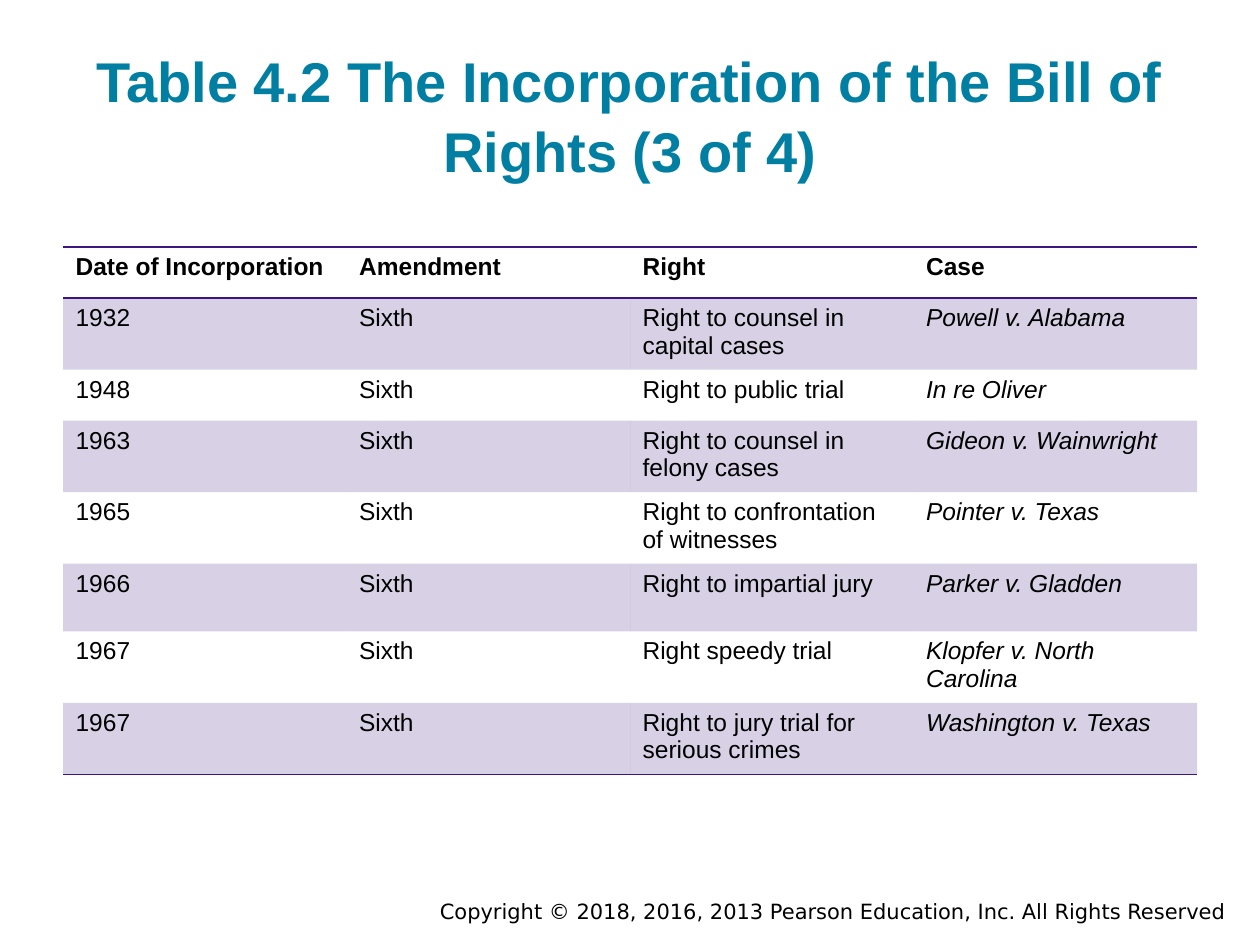
from pptx import Presentation
from pptx.dml.color import RGBColor
from pptx.enum.text import MSO_ANCHOR, PP_ALIGN
from pptx.oxml import parse_xml
from pptx.oxml.ns import nsdecls, qn
from pptx.util import Pt

TEAL = RGBColor(0x00, 0x7F, 0xA3)
PURPLE = RGBColor(0x3C, 0x15, 0x81)
BLACK = RGBColor(0x00, 0x00, 0x00)
NO_STYLE = "{2D5ABB26-0587-4C30-8999-92F81FD0307C}"


def write_text(paragraph, text, color, **font_values):
    paragraph.text = text
    font = paragraph.runs[0].font
    font.color.rgb = color
    for name, value in font_values.items():
        setattr(font, name, value)


def add_border(cell, side):
    line = parse_xml(
        f'<a:{side} {nsdecls("a")} w="{Pt(1)}"><a:solidFill>'
        f'<a:srgbClr val="{PURPLE}"/></a:solidFill></a:{side}>'
    )
    properties = cell._tc.get_or_add_tcPr()
    position = len(properties.findall(qn("a:lnT")))
    properties.insert(position, line)


presentation = Presentation()
presentation.slide_width, presentation.slide_height = Pt(720), Pt(540)
slide = presentation.slides.add_slide(presentation.slide_layouts[6])

text_boxes = [
    {
        "box": (144, 509.8, 563.8, 21.6),
        "text": "Copyright © 2018, 2016, 2013 Pearson Education, Inc. All Rights Reserved",
        "color": BLACK,
        "font": {"name": "DejaVu Sans", "size": Pt(12)},
        "frame": {"word_wrap": True},
        "paragraph": {"alignment": PP_ALIGN.RIGHT},
    },
    {
        "box": (36, 26, 648, 86.4),
        "text": "Table 4.2 The Incorporation of the Bill of Rights (3 of 4)",
        "color": TEAL,
        "font": {"name": "Arial", "size": Pt(32), "bold": True},
        "frame": {
            "word_wrap": True,
            "vertical_anchor": MSO_ANCHOR.BOTTOM,
            "margin_top": Pt(7.2),
            "margin_bottom": Pt(7.2),
        },
        "paragraph": {"alignment": PP_ALIGN.CENTER, "line_spacing": 1.04},
    },
]
for item in text_boxes:
    text_frame = slide.shapes.add_textbox(*map(Pt, item["box"])).text_frame
    paragraph = text_frame.paragraphs[0]
    for target, values in ((text_frame, item["frame"]), (paragraph, item["paragraph"])):
        for name, value in values.items():
            setattr(target, name, value)
    write_text(paragraph, item["text"], item["color"], **item["font"])

header = ("Date of Incorporation", "Amendment", "Right", "Case")
cases = [
    ("1932", "Right to counsel in capital cases", "Powell v. Alabama"),
    ("1948", "Right to public trial", "In re Oliver"),
    ("1963", "Right to counsel in felony cases", "Gideon v. Wainwright"),
    ("1965", "Right to confrontation of witnesses", "Pointer v. Texas"),
    ("1966", "Right to impartial jury", "Parker v. Gladden"),
    ("1967", "Right speedy trial", "Klopfer v. North Carolina"),
    ("1967", "Right to jury trial for serious crimes", "Washington v. Texas"),
]
rows = [header] + [(year, "Sixth", right, case) for year, right, case in cases]
row_heights = [29.2, 38.7, 29.2] + [38.7] * 5

table = slide.shapes.add_table(
    len(rows), len(header), Pt(36), Pt(141.1), Pt(648), Pt(sum(row_heights))
).table
table.first_row = table.horz_banding = False
table._tbl.tblPr.find(qn("a:tableStyleId")).text = NO_STYLE
for column in table.columns:
    column.width = Pt(162)

for row_index, (values, height) in enumerate(zip(rows, row_heights)):
    table.rows[row_index].height = Pt(height)
    for column_index, text in enumerate(values):
        cell = table.cell(row_index, column_index)
        write_text(
            cell.text_frame.paragraphs[0], text, BLACK, name="Arial", size=Pt(14),
            bold=row_index == 0, italic=row_index > 0 and column_index == 3,
        )
        if row_index % 2:
            cell.fill.solid()
            cell.fill.fore_color.rgb = PURPLE
            color = cell._tc.tcPr.find(".//" + qn("a:srgbClr"))
            color.append(parse_xml(f'<a:alpha {nsdecls("a")} val="20000"/>'))
        else:
            cell.fill.background()
        if row_index == 0:
            add_border(cell, "lnT")
        if row_index in (0, len(rows) - 1):
            add_border(cell, "lnB")

presentation.save("out.pptx")
